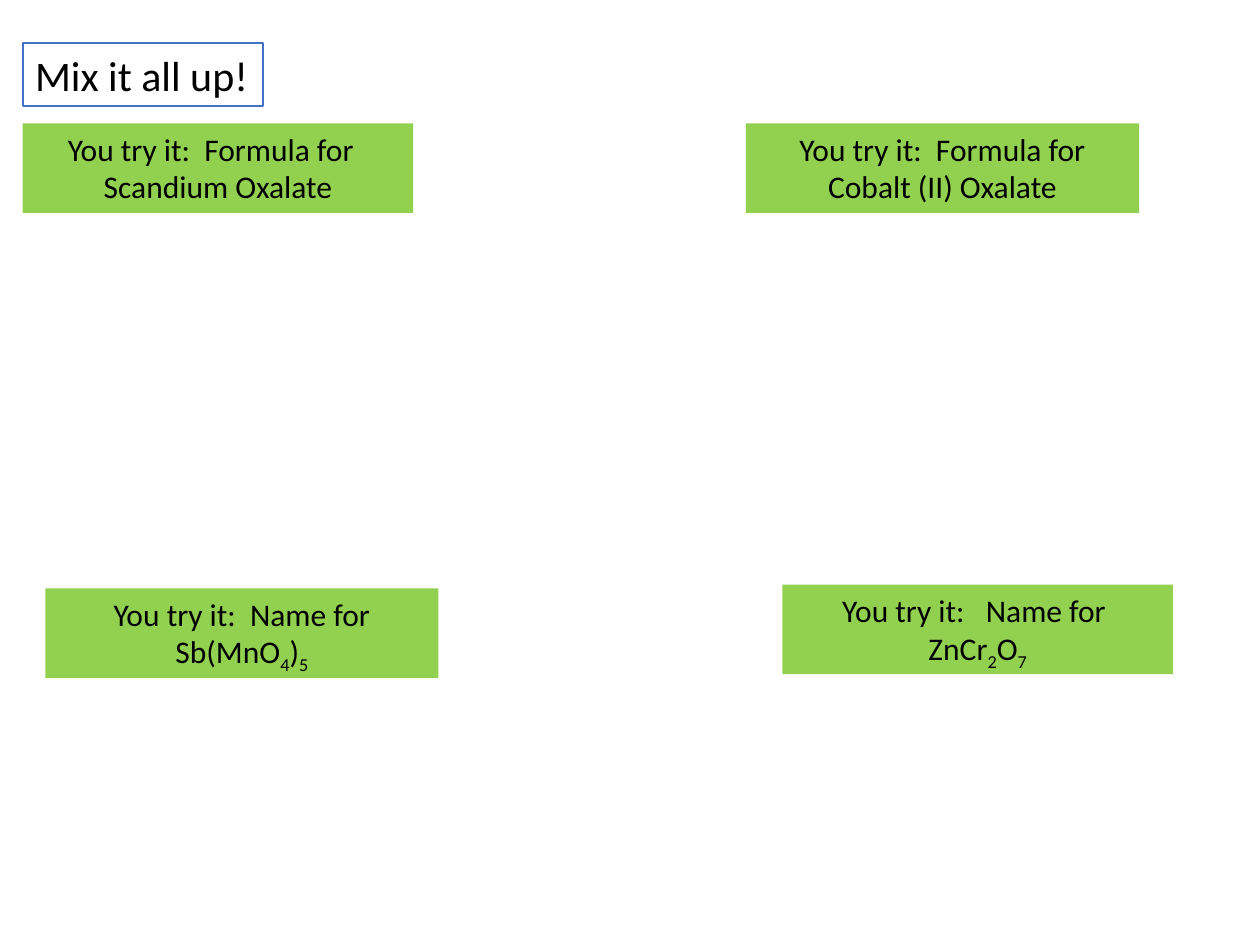
from pptx import Presentation
from pptx.dml.color import RGBColor
from pptx.enum.shapes import MSO_SHAPE as Shape
from pptx.enum.text import MSO_ANCHOR as Anchor, MSO_AUTO_SIZE as AutoSize, PP_ALIGN as Align
from pptx.util import Inches, Pt

COLORS = {"paper": "FFFFFF", "border": "4472C4", "prompt": "92D050", "text": "000000"}
FONT = "Calibri"
PROMPT_HEIGHT = 0.71
PROMPTS = [
    (0.18, 0.98, 3.1, [["You try it:  Formula for  "], ["Scandium Oxalate"]]),
    (5.92, 0.98, 3.12, [["You try it:  Formula for Cobalt (II) Oxalate"]]),
    (6.21, 4.64, 3.1, [["You try it:   Name for "], ["ZnCr", "2", "O", "7"]]),
    (0.36, 4.67, 3.12, [["You try it:  Name for"], ["Sb(MnO", "4", ")", "5"]]),
]


def color(name):
    """Return the named colour."""
    return RGBColor.from_string(COLORS[name])


def add_box(page, left, top, width, height, fill, line=None):
    """Add a filled rectangle, outlined only when a line colour is named."""
    box = page.shapes.add_shape(
        Shape.RECTANGLE, Inches(left), Inches(top), Inches(width), Inches(height))
    box.shadow.inherit = False
    box.fill.solid()
    box.fill.fore_color.rgb = color(fill)
    if line:
        box.line.color.rgb = color(line)
        box.line.width = Pt(1)
    else:
        box.line.fill.background()
    return box


def write_lines(box, lines, size, align, wrap):
    """Write one paragraph per line; digit runs become subscripts."""
    frame = box.text_frame
    frame.word_wrap = wrap
    frame.auto_size = AutoSize.SHAPE_TO_FIT_TEXT
    frame.vertical_anchor = Anchor.TOP
    for index, parts in enumerate(lines):
        para = frame.add_paragraph() if index else frame.paragraphs[0]
        para.alignment = align
        for part in parts:
            span = para.add_run()
            span.text = part
            span.font.name = FONT
            span.font.size = Pt(size)
            span.font.color.rgb = color("text")
            if part.isdigit():
                span.font._element.set("baseline", "-25000")


def add_title(page):
    """Add the outlined title box."""
    box = add_box(page, 0.18, 0.34, 1.91, 0.5, "paper", "border")
    write_lines(box, [["Mix it all up!"]], 24, Align.LEFT, False)


def add_prompt(page, left, top, width, lines):
    """Add a green practice prompt."""
    box = add_box(page, left, top, width, PROMPT_HEIGHT, "prompt")
    write_lines(box, lines, 18, Align.CENTER, True)


def main():
    """Build and save the practice slide."""
    deck = Presentation()
    deck.slide_width, deck.slide_height = Inches(10), Inches(7.5)
    page = deck.slides.add_slide(deck.slide_layouts[6])
    add_title(page)
    for prompt in PROMPTS:
        add_prompt(page, *prompt)
    deck.save("out.pptx")


if __name__ == "__main__":
    main()
